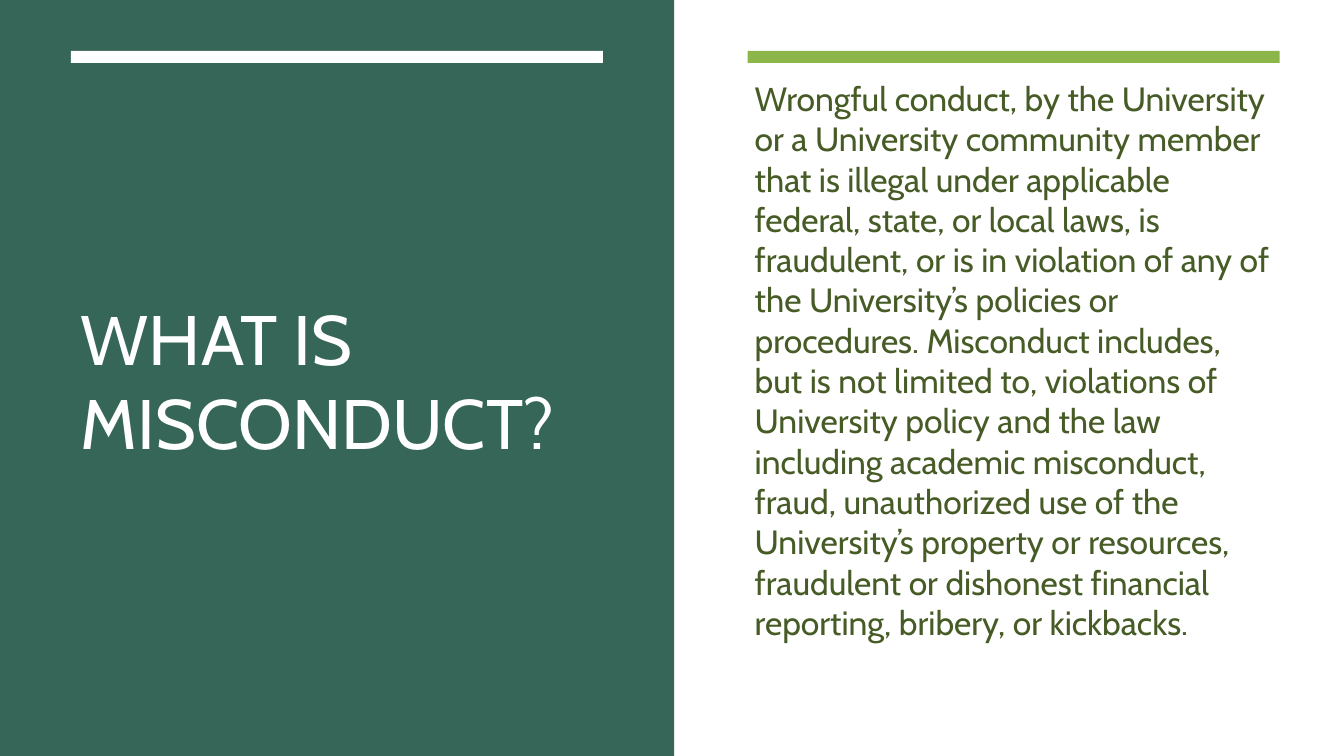
from dataclasses import dataclass

from pptx import Presentation
from pptx.dml.color import RGBColor
from pptx.enum.shapes import MSO_SHAPE
from pptx.enum.text import MSO_ANCHOR, MSO_AUTO_SIZE, PP_ALIGN
from pptx.shapes.autoshape import Shape
from pptx.slide import Slide
from pptx.util import Pt

WIDE, HIGH = 960, 540
TOP, TALL = 81.4, 380
BAR_TOP, BAR_WIDE, BAR_HIGH = 36.4, 380, 8.6
LEFT, RIGHT = 50.6, 534

BODY = (
    "Wrongful conduct, by the University or a University community member "
    "that is illegal under applicable federal, state, or local laws, is "
    "fraudulent, or is in violation of any of the University’s policies or "
    "procedures. Misconduct includes, but is not limited to, violations of "
    "University policy and the law including academic misconduct, fraud, "
    "unauthorized use of the University’s property or resources, fraudulent "
    "or dishonest financial reporting, bribery, or kickbacks."
)


@dataclass
class Block:
    """A plain filled rectangle, in points."""

    left: float
    top: float
    width: float
    height: float
    fill: str


BLOCKS = [
    Block(0, 0, WIDE, HIGH, "FFFFFF"),
    Block(0, 0, 481.5, HIGH, "366658"),
    Block(LEFT, BAR_TOP, BAR_WIDE, BAR_HIGH, "FFFFFF"),
    Block(RIGHT, BAR_TOP, BAR_WIDE, BAR_HIGH, "8CB64A"),
]


def color(code: str) -> RGBColor:
    """Turn a hex string into a colour."""
    return RGBColor.from_string(code)


def draw(slide: Slide, block: Block) -> None:
    """Draw one block without line or shadow."""
    shape = slide.shapes.add_shape(
        MSO_SHAPE.RECTANGLE,
        Pt(block.left), Pt(block.top), Pt(block.width), Pt(block.height),
    )
    shape.shadow.inherit = False
    shape.fill.solid()
    shape.fill.fore_color.rgb = color(block.fill)
    shape.line.fill.background()


def write(shape: Shape, text: str, *, size: float, fill: str,
          foot: float = 3.6) -> None:
    """Put left-aligned, middle-anchored text into a shape."""
    frame = shape.text_frame
    frame.word_wrap = True
    frame.auto_size = MSO_AUTO_SIZE.NONE
    frame.vertical_anchor = MSO_ANCHOR.MIDDLE
    frame.margin_left = frame.margin_right = Pt(7.2)
    frame.margin_top, frame.margin_bottom = Pt(3.6), Pt(foot)
    frame.text = text
    line = frame.paragraphs[0]
    line.alignment = PP_ALIGN.LEFT
    line.space_before = line.space_after = Pt(0)
    line.font.name = "Cabin"
    line.font.size = Pt(size)
    line.font.color.rgb = color(fill)


def main() -> None:
    """Build the slide and save it."""
    deck = Presentation()
    deck.slide_width, deck.slide_height = Pt(WIDE), Pt(HIGH)
    slide = deck.slides.add_slide(deck.slide_layouts[5])
    for block in BLOCKS:
        draw(slide, block)

    body = slide.shapes.add_textbox(Pt(532), Pt(TOP), Pt(382.3), Pt(TALL))
    write(body, BODY, size=24, fill="465B25", foot=32)

    title = slide.shapes.title
    title.left, title.top = Pt(LEFT), Pt(TOP)
    title.width, title.height = Pt(BAR_WIDE), Pt(TALL)
    write(title, "WHAT IS MISCONDUCT?", size=50, fill="FFFFFF")
    body._element.addnext(title._element)

    deck.save("out.pptx")


if __name__ == "__main__":
    main()
